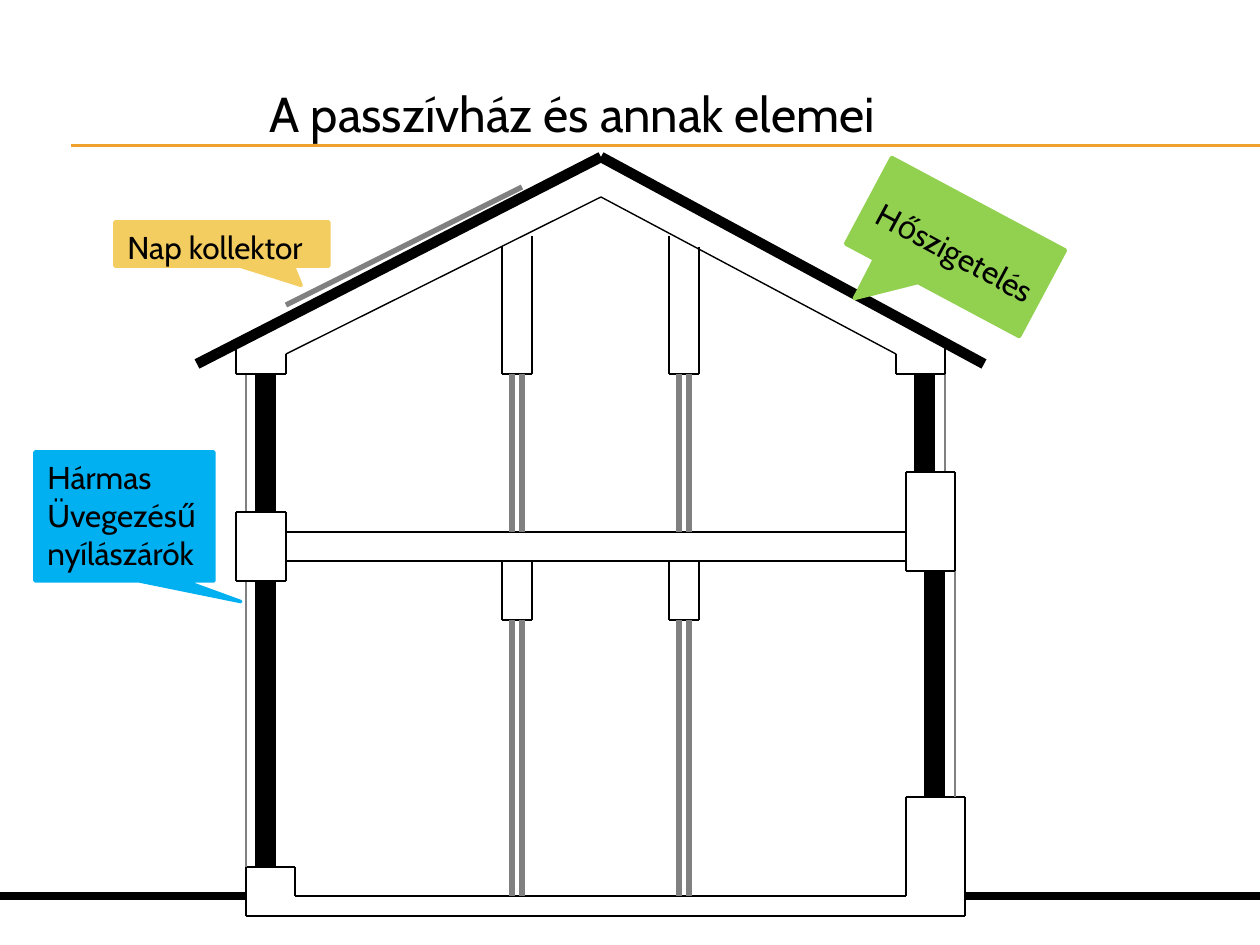
from itertools import pairwise

from lxml import etree
from pptx import Presentation, util as u
from pptx.dml.color import RGBColor
from pptx.enum import shapes, text
from pptx.oxml.ns import qn

PX = 914400 / 126  # EMU per px
BLACK = RGBColor(0x00, 0x00, 0x00)
GRAY = RGBColor(0x80, 0x80, 0x80)
ORANGE = RGBColor(0xF0, 0xA2, 0x2E)
YELLOW = RGBColor(0xF3, 0xCD, 0x60)
BLUE = RGBColor(0x00, 0xB0, 0xF0)
GREEN = RGBColor(0x92, 0xD0, 0x50)
THIN, PIPE, ROOF, WALL, GROUND = 0.79, 3, 6, 12, 4.75

deck = Presentation()
deck.slide_width, deck.slide_height = u.Inches(10), u.Inches(7.5)
slide = deck.slides.add_slide(deck.slide_layouts[5])


def emu(*nums):
    return [round(n * PX) for n in nums]


def draw(*points, color=BLACK, width=THIN):
    """Join the points with straight lines."""
    for start, end in pairwise(points):
        line = slide.shapes.add_connector(
            shapes.MSO_CONNECTOR.STRAIGHT, *emu(*start, *end))
        line.line.color.rgb = color
        line.line.width = u.Pt(width)
        etree.SubElement(line._element.spPr, qn("a:effectLst"))


def write(shape, words, size=18, indent=0):
    frame = shape.text_frame
    frame.word_wrap = True
    frame.auto_size = text.MSO_AUTO_SIZE.NONE
    frame.vertical_anchor = text.MSO_ANCHOR.TOP
    frame.text = words
    for para in frame.paragraphs:
        para.alignment = text.PP_ALIGN.LEFT
        para._p.get_or_add_pPr().set("marL", str(emu(indent)[0]))
        font = para.runs[0].font
        font.name, font.size, font.color.rgb = "Cabin", u.Pt(size), BLACK


# Title and the double rule below it
title = slide.shapes.title
title.left, title.top, title.width, title.height = emu(131, 77, 929, 72)
write(title, "A passzívház és annak elemei", size=28, indent=126)
for y in (145, 146):
    draw((71, y), (1260, y), color=ORANGE, width=0.75)

# Foundation
draw((906, 797), (965, 797), (965, 916), (246, 916), (246, 867),
     (295, 867), (295, 896), (906, 896), (906, 797))

# Outer walls: thick core and thin gray face
for core, face, top, foot in ((266, 246, 374, 512), (266, 246, 581, 867),
                              (925, 945, 374, 472), (935, 955, 571, 797)):
    draw((core, top), (core, foot), width=WALL)
    draw((face, top), (face, foot), color=GRAY)

# Ring beams and the floor between them
for left, top, right, foot in ((236, 512, 286, 581), (906, 472, 955, 571)):
    draw((left, top), (right, top), (right, foot), (left, foot), (left, top))
for y in (532, 561):
    draw((286, y), (906, y))

# Eaves, ceiling, roof and solar panel
draw((236, 345), (236, 374), (286, 374), (286, 354), (601, 197),
     (896, 354), (896, 374), (945, 374), (945, 344))
draw((197, 364), (601, 157), (984, 364), width=ROOF)
draw((522, 187), (286, 305), color=GRAY, width=PIPE)

# Inner walls: a lintel above a pair of gray lines on each floor
for x, left, right in ((502, 246, 236), (669, 236, 247)):
    for ltop, rtop, foot, floor in ((left, right, 374, 532),
                                    (561, 561, 620, 896)):
        draw((x, ltop), (x, foot), (x + 30, foot), (x + 30, rtop))
        for gap in (10, 20):
            draw((x + gap, foot), (x + gap, floor), color=GRAY, width=PIPE)

# Callouts: box, tail, turn and fill, then the label over each
for words, box, tail, turn, fill, area, tilt in (
    ("Nap kollektor", (115, 222, 214, 44), (0.37, 0.94), 0, YELLOW,
     (115, 222, 214, 50), 0),
    ("Hármas\nÜvegezésű nyílászárók", (35, 452, 179, 129), (0.65, 0.66), 0,
     BLUE, (35, 452, 179, 127), 0),
    ("Hőszigetelés", (857, 198, 197, 98), (-0.33, 0.95), 28.1, GREEN,
     (856, 232, 218, 50), 28.3),
):
    note = slide.shapes.add_shape(
        shapes.MSO_SHAPE.RECTANGULAR_CALLOUT, *emu(*box))
    note.adjustments[0], note.adjustments[1] = tail
    note.rotation = turn
    note.shadow.inherit = False
    note.fill.solid()
    note.fill.fore_color.rgb = note.line.color.rgb = fill
    note.line.width = u.Pt(2)
    label = slide.shapes.add_textbox(*emu(*area))
    label.rotation = tilt
    write(label, words)

# Ground level
for start, end in ((0, 246), (965, 1260)):
    draw((start, 896), (end, 896), width=GROUND)

deck.save("out.pptx")
